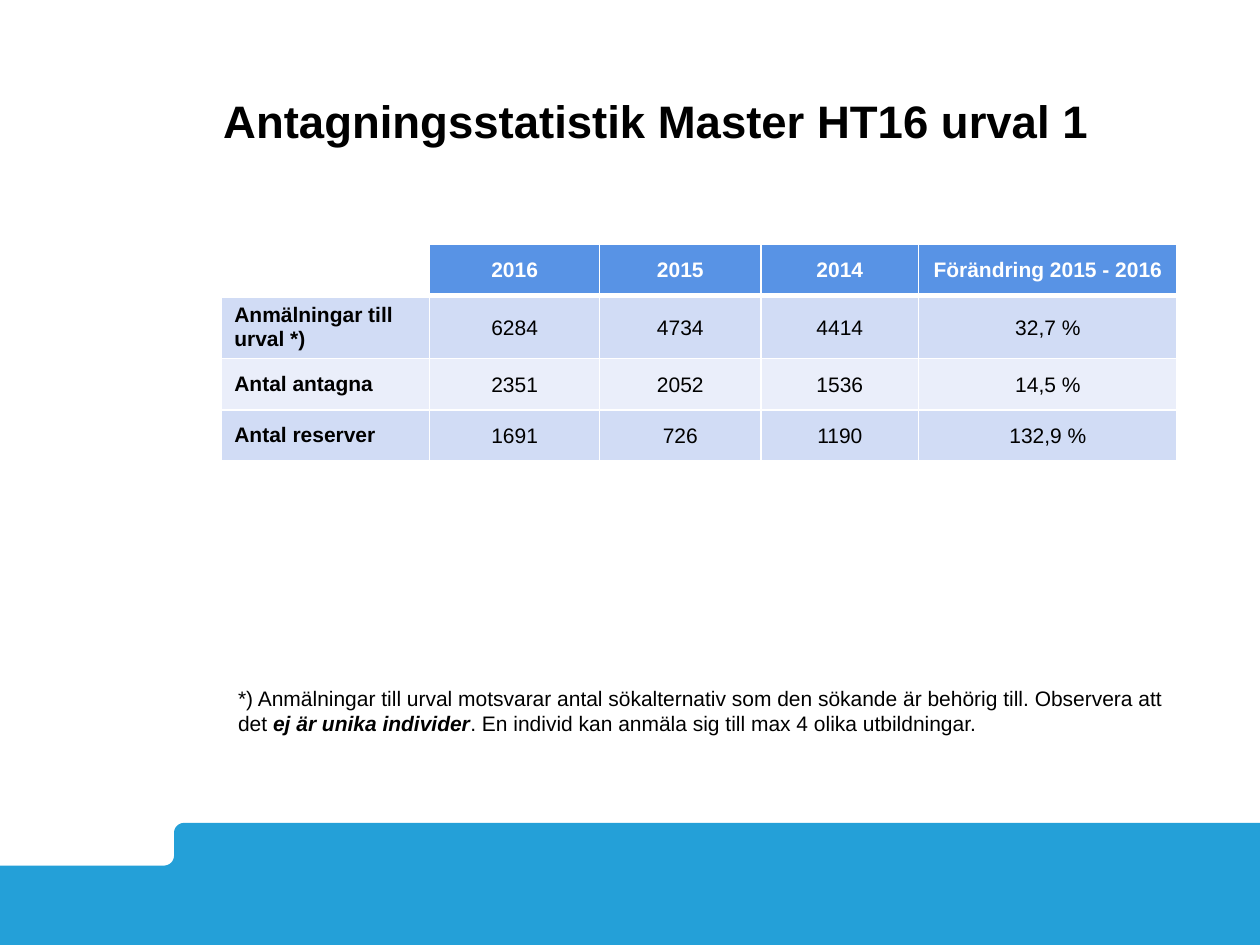
from math import cos, radians, sin

from lxml import etree
from pptx import Presentation
from pptx.dml.color import RGBColor
from pptx.enum.text import MSO_ANCHOR, PP_ALIGN
from pptx.oxml.ns import qn
from pptx.util import Cm, Pt

BLACK = RGBColor(0x00, 0x00, 0x00)
WHITE = RGBColor(0xFF, 0xFF, 0xFF)
BAND_BLUE = RGBColor(0x24, 0xA0, 0xD8)
HEADER_BLUE = RGBColor(0x58, 0x93, 0xE5)
ROW_FILLS = (RGBColor(0xD1, 0xDC, 0xF5), RGBColor(0xEA, 0xEE, 0xFA))
FONT = "Arial"
CENTER, LEFT = PP_ALIGN.CENTER, PP_ALIGN.LEFT
MIDDLE, TOP, BOTTOM = MSO_ANCHOR.MIDDLE, MSO_ANCHOR.TOP, MSO_ANCHOR.BOTTOM

SLIDE_WIDTH, SLIDE_HEIGHT = 25.4, 19.05
COLUMN_WIDTHS = (4.19, 3.43, 3.25, 3.18, 5.21)
ROW_HEIGHT = 1.03
STATISTICS = (
    ("", "2016", "2015", "2014", "Förändring 2015 - 2016"),
    ("Anmälningar till urval *)", "6284", "4734", "4414", "32,7 %"),
    ("Antal antagna", "2351", "2052", "1536", "14,5 %"),
    ("Antal reserver", "1691", "726", "1190", "132,9 %"),
)
FOOTNOTE = (
    ("*) Anmälningar till urval motsvarar antal sökalternativ som den "
     "sökande är behörig till. Observera att det ", False),
    ("ej är unika individer", True),
    (". En individ kan anmäla sig till max 4 olika utbildningar.", False),
)


def add_run(paragraph, text, size=12, color=BLACK, bold=False, italic=False):
    run = paragraph.add_run()
    run.text = text
    font = run.font
    font.name, font.size, font.bold, font.italic = FONT, Pt(size), bold, italic
    font.color.rgb = color


def add_text_box(slide, left, top, width, height, runs, anchor=TOP,
                 margins=None, line_spacing=None):
    """Add one paragraph; runs is a list of (text, format) pairs."""
    box = slide.shapes.add_textbox(Cm(left), Cm(top), Cm(width), Cm(height))
    frame = box.text_frame
    frame.word_wrap = True
    frame.vertical_anchor = anchor
    if margins is not None:
        frame.margin_left = frame.margin_right = Cm(margins)
        frame.margin_top = frame.margin_bottom = Cm(margins)
    paragraph = frame.paragraphs[0]
    if line_spacing:
        paragraph.line_spacing = Pt(line_spacing)
    for text, text_format in runs:
        add_run(paragraph, text, **text_format)


def arc(center_x, center_y, radius, start, end, steps=8):
    angles = [radians(start + (end - start) * i / steps) for i in range(steps + 1)]
    return [(Cm(center_x + radius * cos(a)), Cm(center_y + radius * sin(a)))
            for a in angles]


def add_footer_band(slide):
    step_x, upper, lower, radius = 3.51, 16.59, 17.45, 0.2
    points = arc(step_x - radius, lower - radius, radius, 90, 0)
    points += arc(step_x + radius, upper + radius, radius, 180, 270)
    points += [(Cm(SLIDE_WIDTH), Cm(upper)), (Cm(SLIDE_WIDTH), Cm(SLIDE_HEIGHT)),
               (0, Cm(SLIDE_HEIGHT))]
    builder = slide.shapes.build_freeform(0, Cm(lower))
    builder.add_line_segments(points, close=True)
    shape = builder.convert_to_shape()
    shape.shadow.inherit = False
    shape.fill.solid()
    shape.fill.fore_color.rgb = BAND_BLUE
    shape.line.fill.background()


def set_border(cell, side, width):
    properties = cell._tc.get_or_add_tcPr()
    line = etree.SubElement(properties, qn(f"a:ln{side}"), w=str(Pt(width)))
    fill = etree.SubElement(line, qn("a:solidFill"))
    etree.SubElement(fill, qn("a:srgbClr"), val=str(WHITE))


def format_cell(cell, text, row, column):
    is_header = row == 0
    is_label = column == 0
    # Borders come before the fill; the header rule is thicker
    widths = {"L": 1, "R": 1, "T": 3 if row == 1 else 1, "B": 3 if is_header else 1}
    for side, width in widths.items():
        set_border(cell, side, width)
    cell.fill.solid()
    if is_header:
        cell.fill.fore_color.rgb = WHITE if is_label else HEADER_BLUE
    else:
        cell.fill.fore_color.rgb = ROW_FILLS[(row - 1) % 2]
    cell.vertical_anchor = MIDDLE
    if not is_header and not is_label:
        cell.margin_left = cell.margin_right = cell.margin_top = Cm(0.03)
        cell.margin_bottom = 0
    if text:
        paragraph = cell.text_frame.paragraphs[0]
        paragraph.alignment = LEFT if is_label else CENTER
        add_run(paragraph, text, color=WHITE if is_header else BLACK,
                bold=is_header or is_label)


def add_statistics_table(slide, left, top):
    rows, columns = len(STATISTICS), len(COLUMN_WIDTHS)
    table = slide.shapes.add_table(rows, columns, Cm(left), Cm(top),
                                   Cm(sum(COLUMN_WIDTHS)), Cm(rows * ROW_HEIGHT)).table
    for column, width in zip(table.columns, COLUMN_WIDTHS):
        column.width = Cm(width)
    for row, values in enumerate(STATISTICS):
        table.rows[row].height = Cm(ROW_HEIGHT)
        for column, text in enumerate(values):
            format_cell(table.cell(row, column), text, row, column)


def main():
    presentation = Presentation()
    presentation.slide_width = Cm(SLIDE_WIDTH)
    presentation.slide_height = Cm(SLIDE_HEIGHT)
    slide = presentation.slides.add_slide(presentation.slide_layouts[6])

    add_footer_band(slide)
    # Title
    add_text_box(slide, 4.5, 1.12, 19.28, 1.85,
                 [("Antagningsstatistik Master HT16 urval 1", {"size": 26, "bold": True})],
                 anchor=BOTTOM, margins=0, line_spacing=30)
    add_statistics_table(slide, 4.47, 4.93)
    # Footnote
    add_text_box(slide, 4.55, 13.69, 19.18, 2.06,
                 [(text, {"bold": stressed, "italic": stressed})
                  for text, stressed in FOOTNOTE])

    presentation.save("out.pptx")


if __name__ == "__main__":
    main()
